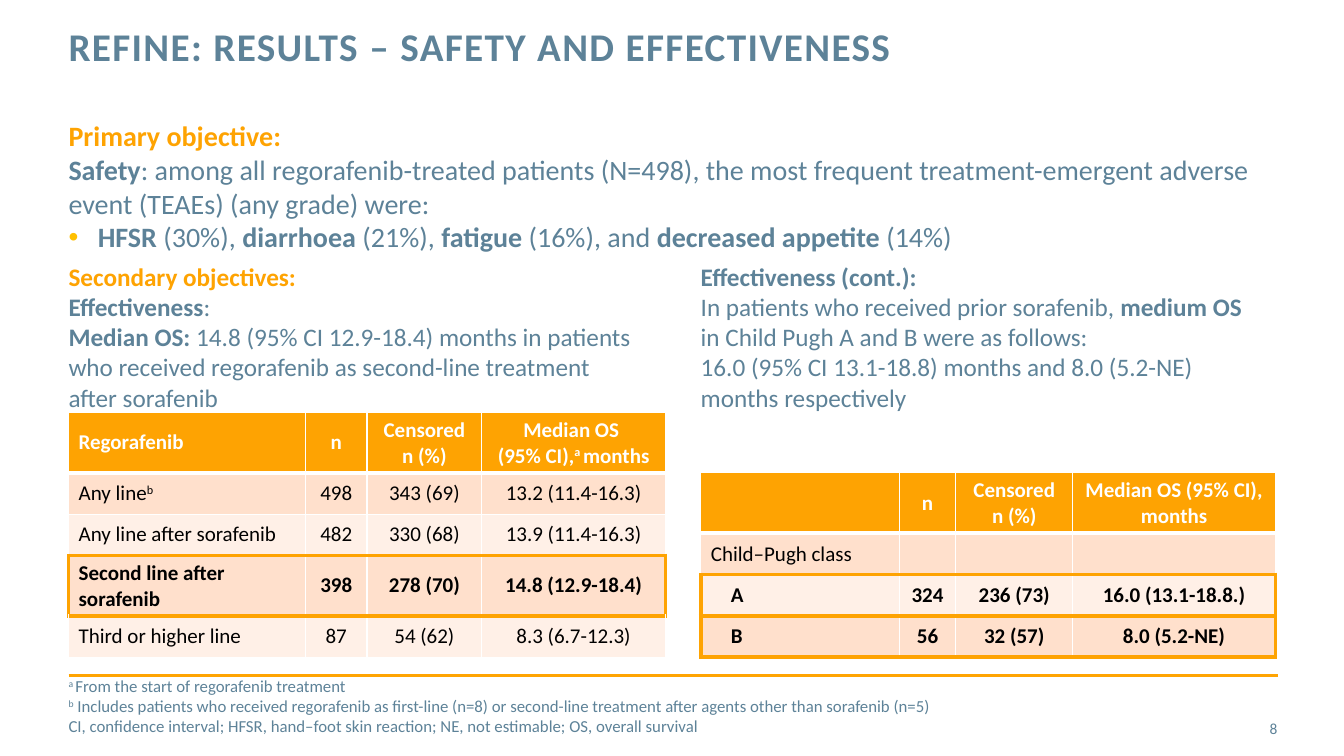
from lxml.etree import SubElement
from pptx import Presentation
from pptx.dml.color import RGBColor
from pptx.enum.shapes import MSO_CONNECTOR
from pptx.enum.text import MSO_ANCHOR, PP_ALIGN
from pptx.oxml.ns import qn
from pptx.util import Inches, Pt

COLORS = {"slate": "5D8298", "orange": "FEA302", "rule": "FFA402", "gold": "FFC000",
          "white": "FFFFFF", "black": "000000", "dark": "FFE0CC", "light": "FFF0E7"}
FONT = "Calibri"
LEFT, RIGHT = 0.68, 6.95

TITLE = "REFINE: RESULTS – SAFETY AND EFFECTIVENESS"
PRIMARY = [
    [("Primary objective:", "bo")],
    [("Safety", "b"), (": among all regorafenib-treated patients (N=498), the most frequent "
                       "treatment-emergent adverse event (TEAEs) (any grade) were:", "")],
    [("HFSR", "b"), (" (30%), ", ""), ("diarrhoea", "b"), (" (21%), ", ""), ("fatigue", "b"),
     (" (16%), and ", ""), ("decreased appetite ", "b"), ("(14%)", "")],
]
SECOND = [
    [("Secondary objectives:", "bo")],
    [("Effectiveness", "b"), (":", "")],
    [("Median OS: ", "b"), ("14.8 (95% CI 12.9-18.4) months in patients who received "
                            "regorafenib as second-line treatment \nafter sorafenib", "")],
]
CONT = [
    [("Effectiveness (cont.):", "b")],
    [("In patients who received prior sorafenib, ", ""), ("medium OS ", "b"),
     ("in Child Pugh A and B were as follows:", "")],
    [("16.0 (95% CI 13.1-18.8) months and 8.0 (5.2-NE) months respectively", "")],
]
NOTES = [[
    ("a ", "^"), ("From the start of regorafenib treatment\n", ""), ("b", "^"),
    (" Includes patients who received regorafenib as first-line (n=8) or second-line "
     "treatment after agents other than sorafenib (n=5) \n"
     "CI, confidence interval; HFSR, hand–foot skin reaction; NE, not estimable; "
     "OS, overall survival", ""),
]]
BOXES = [
    (PRIMARY, (LEFT, 1.13, 12.13, 1.45), 20),
    (SECOND, (LEFT, 2.54, 5.97, 1.62), 18),
    (CONT, (RIGHT, 2.54, 5.6, 1.62), 18),
]
TABLES = [
    {"at": (LEFT, 4.09), "cols": (2.35, 0.61, 1.14, 1.82), "tall": {0: 0.59, 3: 0.6},
     "boxed": {3}, "indent": 0,
     "rows": [
         ("Regorafenib", "n", "Censored n (%)",
          [("Median OS \n(95% CI),", ""), ("a ", "^"), ("months", "")]),
         ([("Any line", ""), ("b", "^")], "498", "343 (69)", "13.2 (11.4-16.3)"),
         ("Any line after sorafenib", "482", "330 (68)", "13.9 (11.4-16.3)"),
         ("Second line after sorafenib", "398", "278 (70)", "14.8 (12.9-18.4)"),
         ("Third or higher line", "87", "54 (62)", "8.3 (6.7-12.3)")]},
    {"at": (RIGHT, 4.69), "cols": (1.97, 0.56, 1.16, 2.01), "tall": {0: 0.59},
     "boxed": {2, 3}, "indent": 0.2,
     "rows": [
         ("", "n", "Censored n (%)", "Median OS (95% CI), months"),
         ("Child–Pugh class", "", "", ""),
         ("A", "324", "236 (73)", "16.0 (13.1-18.8.)"),
         ("B", "56", "32 (57)", "8.0 (5.2-NE)")]},
]


def rgb(name):
    return RGBColor.from_string(COLORS[name])


def style(font, size, color, bold=False):
    font.name, font.size, font.bold = FONT, Pt(size), bold
    font.color.rgb = rgb(color)


def write(para, runs, size, color="slate", bold=False):
    for text, flags in runs:
        for i, part in enumerate(text.split("\n")):
            if i:
                para.add_line_break()
            if not part:
                continue
            run = para.add_run()
            run.text = part
            style(run.font, size, "orange" if "o" in flags else color, bold or "b" in flags)
            if "^" in flags:
                run.font._element.set("baseline", "30000")
    style(para.font, size, color, bold)


def indent(para, left, first):
    props = para._p.get_or_add_pPr()
    props.set("marL", str(Inches(left)))
    props.set("indent", str(Inches(first)))
    return props


def bullet(para):
    props = indent(para, 0.29, -0.29)
    tint = SubElement(props, qn("a:buClr"))
    SubElement(tint, qn("a:srgbClr"), val=COLORS["gold"])
    SubElement(props, qn("a:buFont"), typeface="Arial")
    SubElement(props, qn("a:buChar"), char="•")


def add_text(slide, paras, at, size, insets=(0, 0.05, 0.1, 0.05), anchor=MSO_ANCHOR.TOP):
    frame = slide.shapes.add_textbox(*map(Inches, at)).text_frame
    frame.word_wrap = True
    frame.vertical_anchor = anchor
    (frame.margin_left, frame.margin_top,
     frame.margin_right, frame.margin_bottom) = map(Inches, insets)
    for i, runs in enumerate(paras):
        para = frame.add_paragraph() if i else frame.paragraphs[0]
        if runs[0][0] == "HFSR":
            bullet(para)
        write(para, runs, size)
    return frame


def border(cell, side, color, width):
    line = SubElement(cell._tc.get_or_add_tcPr(), qn("a:ln" + side), w=str(Pt(width)))
    fill = SubElement(line, qn("a:solidFill"))
    SubElement(fill, qn("a:srgbClr"), val=COLORS[color])


def edges(cell, r, c, last, boxed):
    thin, head, box = ("white", 1), ("white", 3), ("orange", 3)
    inside = r in boxed
    border(cell, "L", *(box if inside and c == 0 else thin))
    border(cell, "R", *(box if inside and c == last else thin))
    border(cell, "T", *(box if inside or r - 1 in boxed else head if r == 1 else thin))
    border(cell, "B", *(box if inside or r + 1 in boxed else head if r == 0 else thin))


def add_grid(slide, data):
    rows, cols, boxed = data["rows"], data["cols"], data["boxed"]
    highs = [data["tall"].get(r, 0.41) for r in range(len(rows))]
    size = (sum(cols), sum(highs))
    grid = slide.shapes.add_table(len(rows), len(cols), *map(Inches, data["at"] + size)).table
    for c, wide in enumerate(cols):
        grid.columns[c].width = Inches(wide)
    for r, row in enumerate(rows):
        grid.rows[r].height = Inches(highs[r])
        for c, item in enumerate(row):
            cell = grid.cell(r, c)
            edges(cell, r, c, len(cols) - 1, boxed)
            cell.fill.solid()
            cell.fill.fore_color.rgb = rgb("orange" if r == 0 else "dark" if r % 2 else "light")
            cell.vertical_anchor = MSO_ANCHOR.MIDDLE
            para = cell.text_frame.paragraphs[0]
            para.alignment = PP_ALIGN.CENTER if c else PP_ALIGN.LEFT
            if r in boxed and c == 0:
                indent(para, 0, data["indent"])
            runs = [(item, "")] if isinstance(item, str) else item
            write(para, runs, 15, "black" if r else "white", r == 0 or r in boxed)


def add_title(slide):
    title = slide.shapes.title
    title.left, title.top, title.width, title.height = map(Inches, (LEFT, 0.27, 9.56, 0.88))
    frame = title.text_frame
    frame.word_wrap = True
    frame.vertical_anchor = MSO_ANCHOR.TOP
    frame.margin_left = frame.margin_top = frame.margin_right = frame.margin_bottom = 0
    para = frame.paragraphs[0]
    para.alignment = PP_ALIGN.LEFT
    para.line_spacing = Pt(30)
    write(para, [(TITLE, "b")], 28)
    para.runs[0].font._element.set("spc", "100")


def main():
    deck = Presentation()
    deck.slide_width, deck.slide_height = Inches(13.33), Inches(7.5)
    slide = deck.slides.add_slide(deck.slide_layouts[5])
    add_title(slide)
    rule = slide.shapes.add_connector(
        MSO_CONNECTOR.STRAIGHT, *map(Inches, (LEFT, 6.7, 12.68, 6.7)))
    rule.line.color.rgb = rgb("rule")
    rule.line.width = Pt(2)
    SubElement(rule._element.spPr, qn("a:effectLst"))
    for paras, at, size in BOXES:
        add_text(slide, paras, at, size)
    for data in TABLES:
        add_grid(slide, data)
    flush = (0, 0, 0, 0)
    add_text(slide, NOTES, (LEFT, 6.66, 10.32, 0.64), 12, flush, MSO_ANCHOR.BOTTOM)
    page = add_text(slide, [[("8", "")]], (11.81, 7.03, 0.86, 0.4), 11, flush, MSO_ANCHOR.MIDDLE)
    page.paragraphs[0].alignment = PP_ALIGN.RIGHT
    deck.save("out.pptx")


if __name__ == "__main__":
    main()
